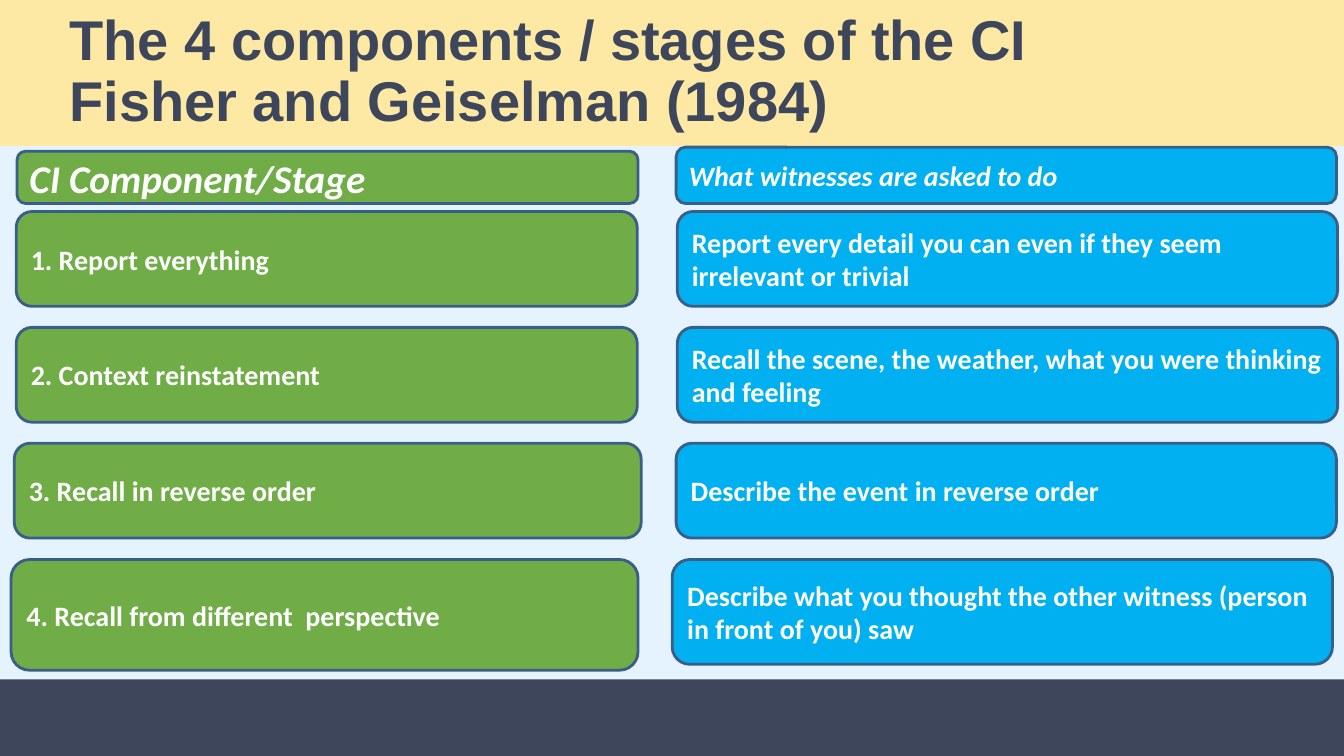
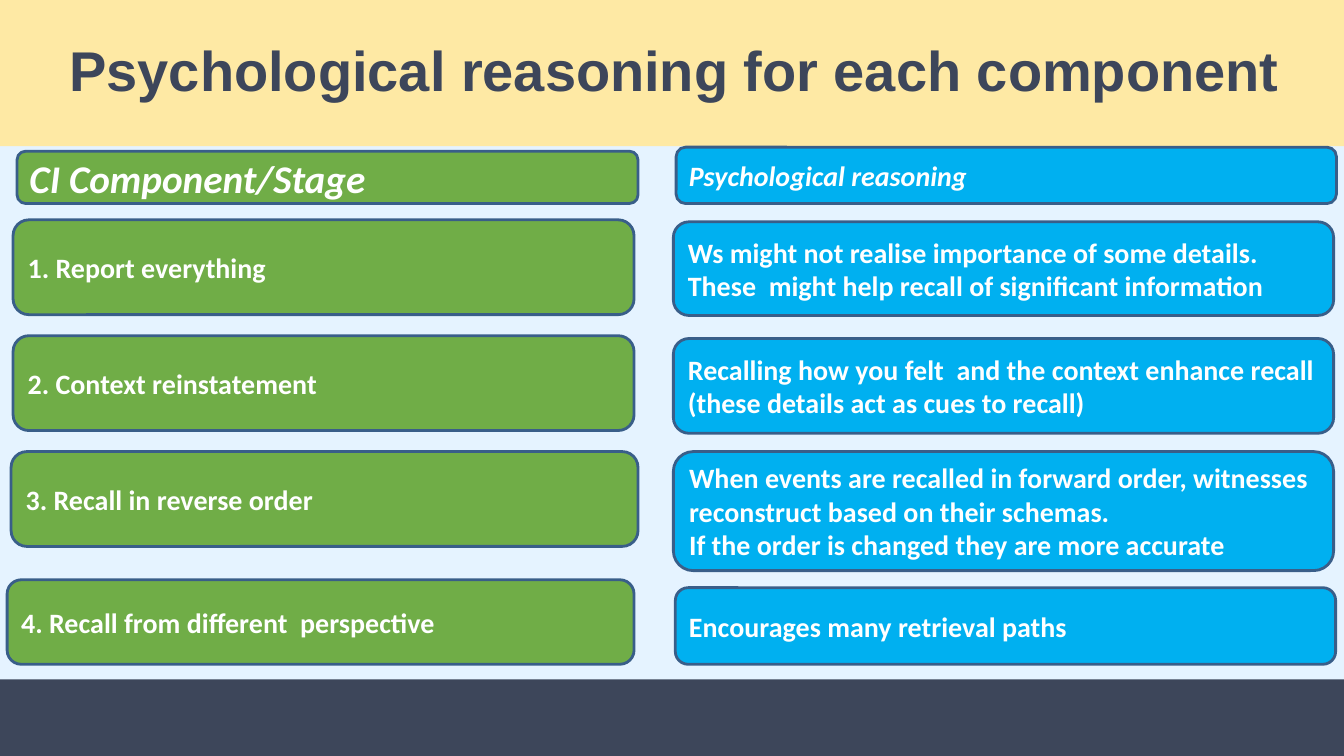
from pptx import Presentation
from pptx.dml.color import RGBColor
from pptx.enum.shapes import MSO_SHAPE
from pptx.enum.text import MSO_ANCHOR, MSO_AUTO_SIZE, PP_ALIGN
from pptx.util import Cm, Pt

RECTANGLE = MSO_SHAPE.RECTANGLE
ROUNDED = MSO_SHAPE.ROUNDED_RECTANGLE
MIDDLE = MSO_ANCHOR.MIDDLE
NO_AUTOFIT = MSO_AUTO_SIZE.NONE
LEFT = PP_ALIGN.LEFT

PALE_BLUE = RGBColor(0xE5, 0xF3, 0xFF)
NAVY = RGBColor(0x3D, 0x46, 0x5A)
CREAM = RGBColor(0xFE, 0xE9, 0xA4)
GREEN = RGBColor(0x70, 0xAD, 0x47)
BLUE = RGBColor(0x00, 0xB0, 0xF0)
OUTLINE = RGBColor(0x39, 0x5E, 0x89)
WHITE = RGBColor(0xFF, 0xFF, 0xFF)

PAGE_WIDTH, PAGE_HEIGHT = 33.87, 19.05
TITLE_HEIGHT = 3.68
FOOTER_TOP = 17.12
ROW_PITCH = 2.92
ROW_HEIGHT = 2.39
STAGE_WIDTHS = (15.65, 15.65, 15.8, 15.8)
ANSWER_WIDTH = 16.64

STAGES = (
    "1. Report everything",
    "2. Context reinstatement",
    "3. Recall in reverse order",
    "4. Recall from different  perspective",
)
TASKS = (
    "Report every detail you can even if they seem irrelevant or trivial",
    "Recall the scene, the weather, what you were thinking and feeling",
    "Describe the event in reverse order",
    "Describe what you thought the other witness (person in front of you) saw",
)
REASONS = (
    "Ws might not realise importance of some details. "
    "These  might help recall of significant information",
    "Recalling how you felt  and the context enhance recall "
    "(these details act as cues to recall)",
    "When events are recalled in forward order, witnesses reconstruct "
    "based on their schemas.\nIf the order is changed they are more accurate",
    "Encourages many retrieval paths",
)


class StageDeck:
    """Holds the shared style and the slide being built."""

    def __init__(self):
        self.deck = Presentation()
        self.deck.slide_width = Cm(PAGE_WIDTH)
        self.deck.slide_height = Cm(PAGE_HEIGHT)
        self.page = None

    def add_page(self, title, answer_heading):
        self.page = self.deck.slides.add_slide(self.deck.slide_layouts[5])
        background = self.page.background.fill
        background.solid()
        background.fore_color.rgb = PALE_BLUE
        self.add_shape(RECTANGLE, 0, FOOTER_TOP, PAGE_WIDTH,
                       PAGE_HEIGHT - FOOTER_TOP, NAVY)
        self.add_title(title)
        self.add_box("CI Component/Stage", 0.43, 3.81, 15.65, 1.32, GREEN,
                     size=28, italic=True)
        self.add_box(answer_heading, 17.04, 3.71, ANSWER_WIDTH, 1.42, BLUE,
                     italic=True)

    def add_shape(self, kind, left, top, width, height, color):
        shape = self.page.shapes.add_shape(
            kind, Cm(left), Cm(top), Cm(width), Cm(height))
        shape.shadow.inherit = False
        shape.fill.solid()
        shape.fill.fore_color.rgb = color
        shape.line.fill.background()
        return shape

    def add_title(self, text):
        title = self.page.shapes.title
        title.left, title.top = Cm(0), Cm(0)
        title.width, title.height = Cm(PAGE_WIDTH), Cm(TITLE_HEIGHT)
        title.fill.solid()
        title.fill.fore_color.rgb = CREAM
        frame = title.text_frame
        frame.text = text
        frame.auto_size = NO_AUTOFIT
        frame.margin_left = Cm(1.75)
        self.style_text(frame, "Arial", 40, NAVY, spacing=0.9)

    def add_box(self, text, left, top, width, height, color,
                size=20, italic=False):
        box = self.add_shape(ROUNDED, left, top, width, height, color)
        box.line.color.rgb = OUTLINE
        box.line.width = Pt(2)
        frame = box.text_frame
        frame.text = text
        frame.word_wrap = True
        self.style_text(frame, "Calibri", size, WHITE, italic)

    def style_text(self, frame, font, size, color, italic=False, spacing=1.0):
        frame.vertical_anchor = MIDDLE
        for para in frame.paragraphs:
            para.alignment = LEFT
            para.line_spacing = spacing
            for span in para.runs:
                span.font.name = font
                span.font.size = Pt(size)
                span.font.bold = True
                span.font.italic = italic
                span.font.color.rgb = color

    def add_stages(self, lefts, first_top, last_top, last_height):
        places = self.row_places(first_top, last_top, last_height)
        for text, left, width, (top, height) in zip(
                STAGES, lefts, STAGE_WIDTHS, places):
            self.add_box(text, left, top, width, height, GREEN)

    def add_answers(self, texts, lefts, places):
        for text, left, (top, height) in zip(texts, lefts, places):
            self.add_box(text, left, top, ANSWER_WIDTH, height, BLUE)

    def row_places(self, first_top, last_top, last_height):
        rows = [(first_top + row * ROW_PITCH, ROW_HEIGHT) for row in range(3)]
        return rows + [(last_top, last_height)]


def main():
    show = StageDeck()

    show.add_page("The 4 components / stages of the CI\v"
                  "Fisher and Geiselman (1984)",
                  "What witnesses are asked to do")
    show.add_stages((0.41, 0.41, 0.36, 0.28), 5.33, 14.1, 2.79)
    show.add_answers(TASKS, (17.07, 17.07, 17.04, 16.94),
                     show.row_places(5.33, 14.1, 2.64))

    show.add_page("Psychological reasoning for each component",
                  "Psychological reasoning")
    show.add_stages((0.33, 0.33, 0.28, 0.18), 5.54, 14.61, 2.13)
    show.add_answers(REASONS, (16.97, 16.97, 16.97, 17.02),
                     ((5.59, 2.36), (8.53, 2.39), (11.38, 3), (14.81, 1.93)))

    show.deck.save("out.pptx")


if __name__ == "__main__":
    main()
